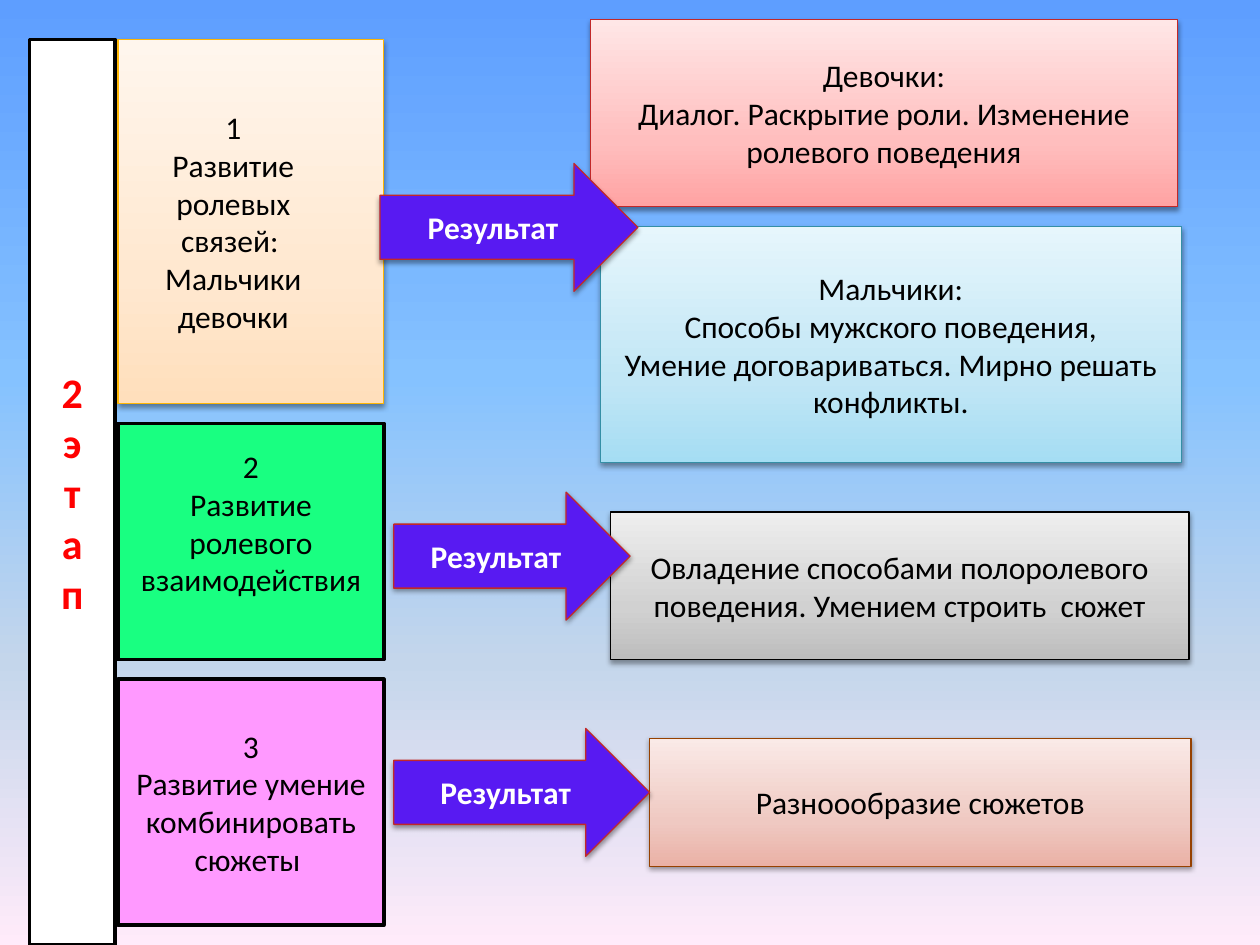
from lxml.etree import SubElement
from pptx import Presentation
from pptx.dml.color import RGBColor
from pptx.enum.shapes import MSO_SHAPE
from pptx.enum.text import MSO_ANCHOR, MSO_AUTO_SIZE, PP_ALIGN
from pptx.oxml.ns import qn
from pptx.util import Inches, Pt

COLORS = {
    "black": "000000", "white": "FFFFFF", "red": "FF0000",
    "green": "19FF81", "pink": "FF99FF", "violet": "581AF2",
    "crimson": "C22829", "gold": "FEB604", "teal": "348FA6", "brown": "964101",
}
# Gradient stops: (percent, colour)
GRADIENTS = {
    "sky": [(0, "5E9EFF"), (40, "85C2FF"), (70, "C4D6EB"), (100, "FFEBFA")],
    "peach": [(0, "FFDFBC"), (35, "FFE8D0"), (100, "FFF6ED")],
    "rose": [(0, "FFA3A3"), (35, "FFBEBE"), (100, "FFE6E6")],
    "aqua": [(0, "A5DDF3"), (35, "C1E6F5"), (100, "E6F6FC")],
    "grey": [(0, "BDBDBD"), (35, "D1D1D1"), (100, "EEEEEE")],
    "clay": [(0, "EAB1A6"), (35, "EFC9C2"), (100, "FAEAE7")],
}

prs = Presentation()
prs.slide_width, prs.slide_height = Inches(10), Inches(7.5)
slide = prs.slides.add_slide(prs.slide_layouts[6])
CELL = prs.slide_width / 64  # square grid, 64 columns by 48 rows


def set_gradient(fill, owner, name, angle):
    fill.gradient()
    fill.gradient_angle = angle
    stop_list = owner.find(".//" + qn("a:gsLst"))
    for old_stop in list(stop_list):
        stop_list.remove(old_stop)
    for percent, color in GRADIENTS[name]:
        stop = SubElement(stop_list, qn("a:gs"), pos=str(percent * 1000))
        SubElement(stop, qn("a:srgbClr"), val=color)


def add_block(cells, text, fill, line, line_width=0.75, kind=MSO_SHAPE.RECTANGLE,
              color="black", size=18, bold=False):
    block = slide.shapes.add_shape(kind, *(round(n * CELL) for n in cells))
    if fill in GRADIENTS:
        set_gradient(block.fill, block.element, fill, 90)
    else:
        block.fill.solid()
        block.fill.fore_color.rgb = RGBColor.from_string(COLORS[fill])
    block.line.color.rgb = RGBColor.from_string(COLORS[line])
    block.line.width = Pt(line_width)

    # Thin outlines go with a soft shadow, heavy ones with none
    block.shadow.inherit = False
    if line_width < 1:
        effects = block.element.spPr.find(qn("a:effectLst"))
        shadow = SubElement(effects, qn("a:outerShdw"), blurRad=str(Pt(3.1)),
                            dist=str(Pt(1.6)), dir="5400000", rotWithShape="0")
        shade = SubElement(shadow, qn("a:srgbClr"), val=COLORS["black"])
        SubElement(shade, qn("a:alpha"), val="38000")

    frame = block.text_frame
    frame.text = text
    frame.word_wrap = True
    frame.vertical_anchor = MSO_ANCHOR.MIDDLE
    for paragraph in frame.paragraphs:
        paragraph.alignment = PP_ALIGN.CENTER
        for run in paragraph.runs:
            run.font.name = "Calibri"
            run.font.size = Pt(size)
            run.font.bold = bold
            run.font.color.rgb = RGBColor.from_string(COLORS[color])
    return block


# Background
set_gradient(slide.background.fill, slide.element, "sky", 270)

# Stage title, stacked letters
stage = add_block((1.5, 2, 4.35, 46), "2этап", "white", "black", 2,
                  color="red", size=24, bold=True)
stage.text_frame.vertical_anchor = MSO_ANCHOR.TOP
stage.text_frame.auto_size = MSO_AUTO_SIZE.SHAPE_TO_FIT_TEXT
stage.text_frame._txBody.bodyPr.set("vert", "wordArtVert")

# Steps: top row, height, text, fill, line, line width
steps = [
    (2, 18.5, "1\nРазвитие ролевых связей: \nМальчики\nдевочки", "peach", "gold", 0.75),
    (21.5, 12, "2\nРазвитие ролевого взаимодействия", "green", "black", 2),
    (34.5, 12.5, "3\nРазвитие умение комбинировать сюжеты ", "pink", "black", 2),
]
roles, interaction, plots = [
    add_block((6, top, 13.5, height), *look) for top, height, *look in steps]
# The first number sits left of centre, the second text above the middle
roles.text_frame.paragraphs[0]._p.get_or_add_pPr().set("marR", str(Inches(0.28)))
interaction.text_frame.margin_bottom = Inches(0.35)

# Results
results = [
    ((30, 1, 29.8, 9.5),
     "Девочки:\nДиалог. Раскрытие роли. Изменение ролевого поведения", "rose", "crimson"),
    ((30.5, 11.5, 29.5, 12),
     "Мальчики:\nСпособы мужского поведения,\n"
     "Умение договариваться. Мирно решать конфликты.", "aqua", "teal"),
    ((31, 26, 29.4, 7.5),
     "Овладение способами полоролевого поведения. Умением строить  сюжет",
     "grey", "black"),
    ((33, 37.5, 27.5, 6.5), "Разноообразие сюжетов", "clay", "brown"),
]
for cells, *look in results:
    add_block(cells, *look)

# Arrows from steps to results: left column, top row, width
for left, top, width in [(19.3, 8.3, 13.1), (20, 25, 12), (20, 37, 13)]:
    add_block((left, top, width, 6.5), "Результат", "violet", "crimson",
              kind=MSO_SHAPE.RIGHT_ARROW, color="white", bold=True)

prs.save("out.pptx")
